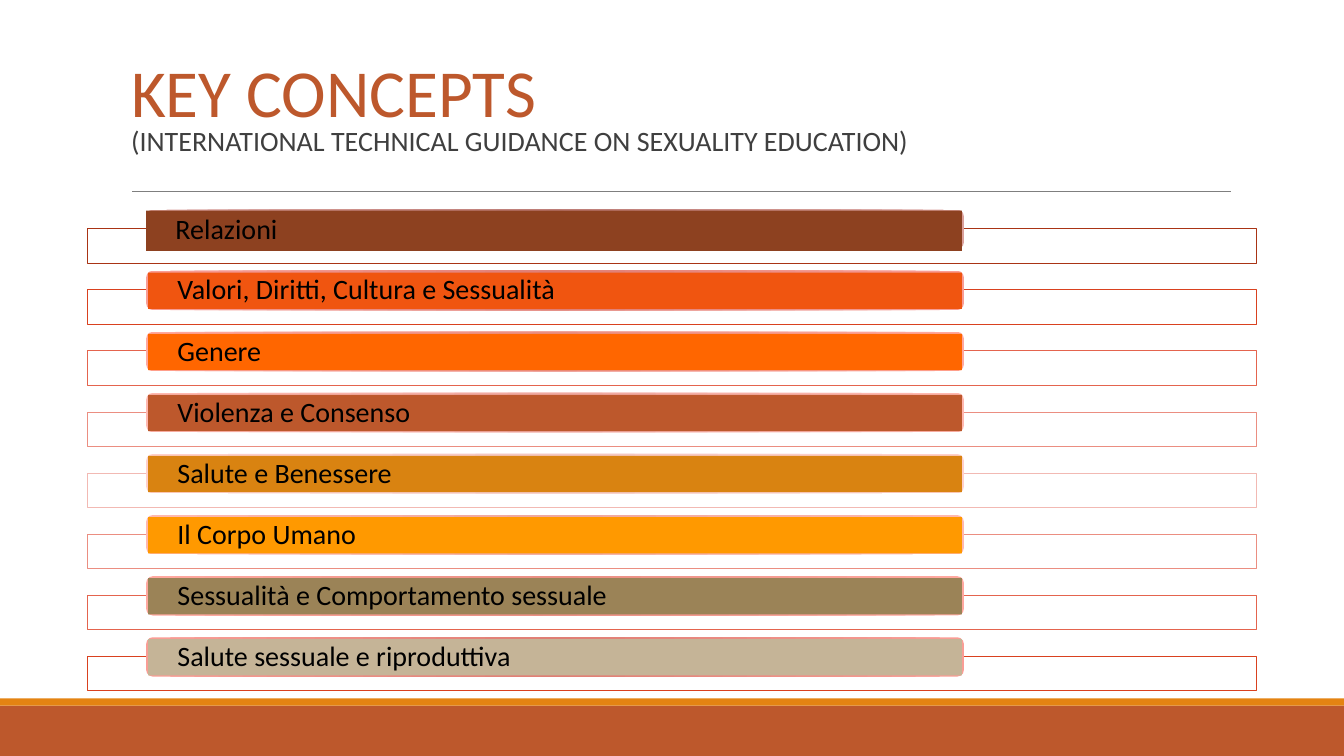
from lxml.etree import SubElement
from pptx import Presentation
from pptx.dml.color import RGBColor
from pptx.enum.shapes import MSO_CONNECTOR, MSO_SHAPE
from pptx.enum.text import MSO_ANCHOR, MSO_AUTO_SIZE, PP_ALIGN
from pptx.oxml.ns import qn
from pptx.util import Inches, Pt

WHITE = RGBColor(0xFF, 0xFF, 0xFF)
BLACK = RGBColor(0, 0, 0)
RUST = RGBColor(0xBD, 0x58, 0x2C)
ORANGE = RGBColor(0xE4, 0x83, 0x12)
GRAY = RGBColor(0x7F, 0x7F, 0x7F)
CHARCOAL = RGBColor(0x3F, 0x3F, 0x3F)

TITLE = [("KEY CONCEPTS", 48, RUST),
         ("(INTERNATIONAL TECHNICAL GUIDANCE ON SEXUALITY EDUCATION)", 20, CHARCOAL)]

TONES = {
    "dark": ("A93415", "BB7973", "DAA09B"),
    "strong": ("D9411F", "DF7D73", "F99D95"),
    "medium": ("E4644E", "E98E83", "FFA89F"),
    "light": ("EB8E81", "EFA89F", "FFB8AF"),
    "pale": ("F2B9B3", "F4C7C2", "FFD0CB"),
}
CONCEPTS = [
    ("Relazioni", "8D4120", "dark"),
    ("Valori, Diritti, Cultura e Sessualità", "F05510", "strong"),
    ("Genere", "FF6600", "medium"),
    ("Violenza e Consenso", "BD582C", "light"),
    ("Salute e Benessere", "D98311", "pale"),
    ("Il Corpo Umano", "FF9900", "light"),
    ("Sessualità e Comportamento sessuale", "9B8357", "medium"),
    ("Salute sessuale e riproduttiva", "C5B497", "strong"),
]
FIRST_TOP, ROW_PITCH = 2.08, 0.606
FIRST_LABEL = (1.45, 0.01, 8.09, 0.4)
OTHER_LABEL = (1.47, 0.02, 8.07, 0.36)


def write_text(shape, lines, spacing=0.9, inset=(0.29, 0)):
    """Write (text, size, colour) lines as one left-aligned paragraph."""
    frame = shape.text_frame
    frame.word_wrap = True
    frame.auto_size = MSO_AUTO_SIZE.NONE
    frame.vertical_anchor = MSO_ANCHOR.MIDDLE
    frame.margin_left = frame.margin_right = Inches(inset[0])
    frame.margin_top = frame.margin_bottom = Inches(inset[1])
    paragraph = frame.paragraphs[0]
    paragraph.alignment = PP_ALIGN.LEFT
    paragraph.line_spacing = spacing
    for index, (text, size, color) in enumerate(lines):
        if index:
            paragraph.add_line_break()
        run = paragraph.add_run()
        run.text = text
        run.font.name = "Calibri"
        run.font.size = Pt(size)
        run.font.color.rgb = color


def add_box(slide, box, fill=None, line=None, kind=MSO_SHAPE.RECTANGLE):
    """Add a flat shape with an optional solid fill and outline."""
    shape = slide.shapes.add_shape(kind, *(Inches(value) for value in box))
    shape.shadow.inherit = False
    if fill is not None:
        shape.fill.solid()
        shape.fill.fore_color.rgb = fill
    if line is None:
        shape.line.fill.background()
    else:
        shape.line.color.rgb = line
        shape.line.width = Pt(0.75)
    return shape


def add_concept(slide, top, text, color, tone, label_box):
    """Add one concept: wide frame, glowing rounded bar and label."""
    line, inner, outer = (RGBColor.from_string(value) for value in TONES[tone])
    frame = add_box(slide, (0.87, top + 0.19, 11.59, 0.34), WHITE, line)
    white = frame._element.spPr.find(qn("a:solidFill")).find(qn("a:srgbClr"))
    SubElement(white, qn("a:alpha"), val="88000")

    bar = add_box(slide, (1.45, top, 8.11, 0.39), kind=MSO_SHAPE.ROUNDED_RECTANGLE)
    bar.fill.gradient()
    for stop, stop_color in zip(bar.fill.gradient_stops, (inner, outer)):
        stop.color.rgb = stop_color
    gradient = bar._element.spPr.find(qn("a:gradFill"))
    gradient.remove(gradient.find(qn("a:lin")))
    circle = SubElement(gradient, qn("a:path"), path="circle")
    SubElement(circle, qn("a:fillToRect"), l="50000", t="50000", r="50000", b="50000")

    left, offset, width, height = label_box
    label = add_box(slide, (left, top + offset, width, height), RGBColor.from_string(color))
    write_text(label, [(text, 20, BLACK)])


def main():
    """Build the key concepts slide."""
    presentation = Presentation()
    presentation.slide_width = Inches(13.33)
    presentation.slide_height = Inches(7.5)
    slide = presentation.slides.add_slide(presentation.slide_layouts[5])

    add_box(slide, (0, 7, 13.33, 0.5), RUST)
    add_box(slide, (0, 6.93, 13.33, 0.07), ORANGE)
    rule = slide.shapes.add_connector(
        MSO_CONNECTOR.STRAIGHT, Inches(1.31), Inches(1.9), Inches(12.21), Inches(1.9))
    rule.line.color.rgb = GRAY
    rule.line.width = Pt(0.75)
    SubElement(rule._element.spPr, qn("a:effectLst"))

    title = slide.shapes.title
    title.left, title.top = Inches(1.2), Inches(0.31)
    title.width, title.height = Inches(11), Inches(1.59)
    write_text(title, TITLE, spacing=0.8, inset=(0.1, 0.05))

    for row, (text, color, tone) in enumerate(CONCEPTS):
        label_box = OTHER_LABEL if row else FIRST_LABEL
        add_concept(slide, FIRST_TOP + row * ROW_PITCH, text, color, tone, label_box)

    presentation.save("out.pptx")


if __name__ == "__main__":
    main()
